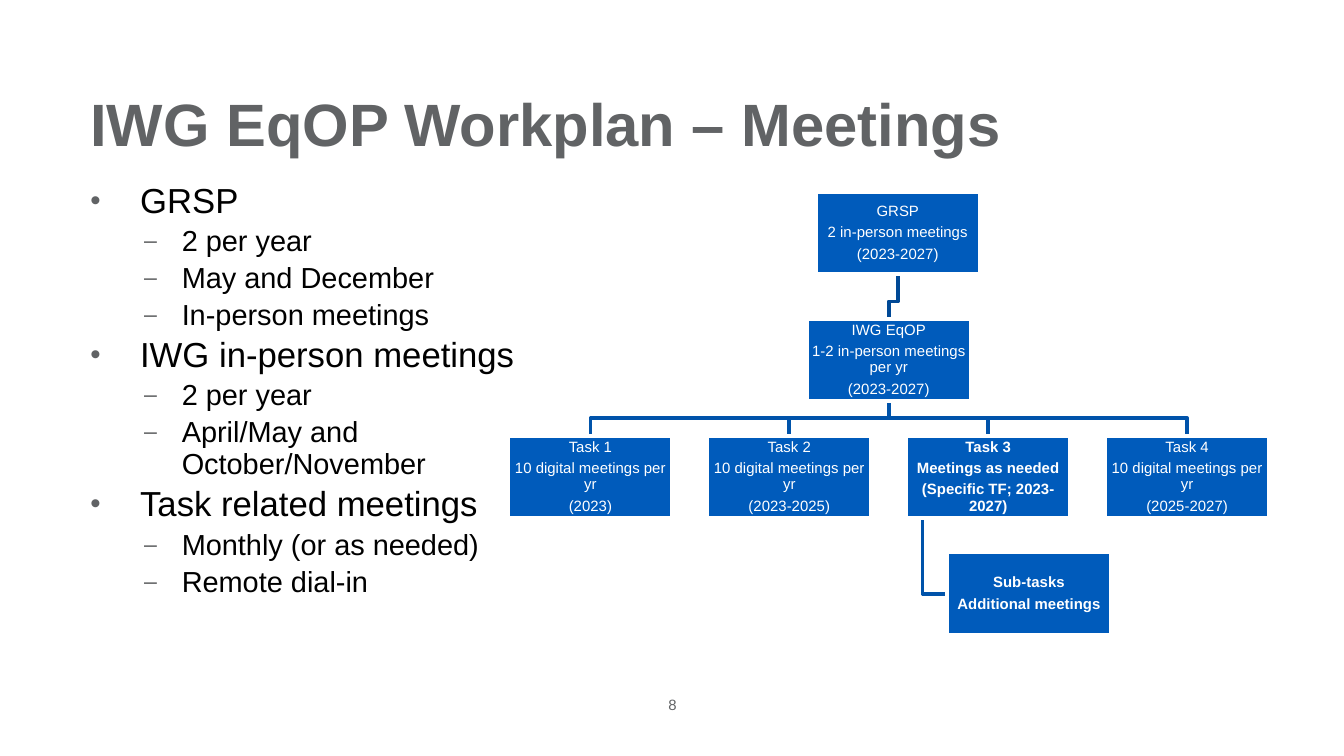
from lxml import etree
from pptx import Presentation
from pptx.dml.color import RGBColor
from pptx.enum.shapes import MSO_SHAPE
from pptx.enum.text import MSO_ANCHOR, PP_ALIGN
from pptx.oxml.ns import qn
from pptx.util import Inches, Pt

RECTANGLE = MSO_SHAPE.RECTANGLE
TOP, MIDDLE, BOTTOM = MSO_ANCHOR.TOP, MSO_ANCHOR.MIDDLE, MSO_ANCHOR.BOTTOM
LEFT, CENTER = PP_ALIGN.LEFT, PP_ALIGN.CENTER

COLORS = {
    "gray": "616365",
    "text": "000000",
    "box": "005BBB",
    "white": "FFFFFF",
    "top_link": "004996",
    "link": "0053AA",
}
LEVELS = [
    {"size": 18.6, "margin": 0.37, "hanging": 0.37, "mark": "•", "scale": 85},
    {"size": 15.5, "margin": 0.68, "hanging": 0.28, "mark": "–", "scale": 80},
]
BOX_WIDTH, BOX_HEIGHT = 12.2, 6.1
TASK_LEFT, TASK_STEP, TASK_TOP = 37.83, 14.8, 32.43


class MeetingSlide:
    """Draws the meeting plan on a grid of 100 columns with square cells."""

    def __init__(self, presentation, font="Arial"):
        self.slide = presentation.slides.add_slide(presentation.slide_layouts[6])
        self.cell = presentation.slide_width / 100
        self.font = font

    def units(self, *lengths):
        return [round(length * self.cell) for length in lengths]

    def color(self, name):
        return RGBColor.from_string(COLORS[name])

    def run(self, paragraph, text, size, color, bold=False):
        run = paragraph.add_run()
        run.text = text
        run.font.name = self.font
        run.font.size = Pt(size)
        run.font.bold = bold
        run.font.color.rgb = self.color(color)

    def frame(self, shape, anchor, insets):
        frame = shape.text_frame
        frame.word_wrap = True
        frame.vertical_anchor = anchor
        frame.margin_left, frame.margin_top, frame.margin_right, frame.margin_bottom = map(Inches, insets)
        return frame

    def paragraphs(self, frame, items):
        for index, item in enumerate(items):
            yield frame.add_paragraph() if index else frame.paragraphs[0], item

    def label(self, place, text, size, anchor, align, insets, bold=False):
        shape = self.slide.shapes.add_textbox(*self.units(*place))
        paragraph = self.frame(shape, anchor, insets).paragraphs[0]
        paragraph.alignment = align
        self.run(paragraph, text, size, "gray", bold)

    def bullet(self, paragraph, level):
        properties = paragraph._p.get_or_add_pPr()
        properties.set("marL", str(Inches(level["margin"])))
        properties.set("indent", str(-Inches(level["hanging"])))
        color = etree.SubElement(properties, qn("a:buClr"))
        etree.SubElement(color, qn("a:srgbClr"), val=COLORS["gray"])
        etree.SubElement(properties, qn("a:buSzPct"), val=str(level["scale"] * 1000))
        etree.SubElement(properties, qn("a:buFont"), typeface=self.font)
        etree.SubElement(properties, qn("a:buChar"), char=level["mark"])

    def outline(self, place, items):
        shape = self.slide.shapes.add_textbox(*self.units(*place))
        frame = self.frame(shape, TOP, (0.1, 0.05, 0.1, 0.05))
        for paragraph, (depth, text) in self.paragraphs(frame, items):
            level = LEVELS[depth]
            self.bullet(paragraph, level)
            paragraph.level = depth
            paragraph.line_spacing = 0.92
            paragraph.space_before = Pt(2.7)
            self.run(paragraph, text, level["size"], "text")
        frame.paragraphs[0].space_before = Pt(0)

    def box(self, left, top, lines, bold=False):
        place = self.units(left, top, BOX_WIDTH, BOX_HEIGHT)
        shape = self.slide.shapes.add_shape(RECTANGLE, *place)
        shape.shadow.inherit = False
        shape.fill.solid()
        shape.fill.fore_color.rgb = self.color("box")
        shape.line.color.rgb = self.color("white")
        shape.line.width = Pt(2)
        frame = self.frame(shape, MIDDLE, (0.01,) * 4)
        for paragraph, text in self.paragraphs(frame, lines):
            paragraph.alignment = CENTER
            paragraph.line_spacing = 0.9
            paragraph.space_after = Pt(2.8)
            self.run(paragraph, text, 8, "white", bold)

    def link(self, points, color):
        start, *others = [self.units(*point) for point in points]
        builder = self.slide.shapes.build_freeform(*start)
        builder.add_line_segments(others, close=False)
        shape = builder.convert_to_shape()
        shape.shadow.inherit = False
        shape.fill.background()
        shape.line.color.rgb = self.color(color)
        shape.line.width = Pt(2)

    def branch(self, parent, child, color):
        start = parent[0] + BOX_WIDTH / 2
        end = child[0] + BOX_WIDTH / 2
        bend = child[1] - 1.3
        self.link([(start, parent[1] + BOX_HEIGHT), (start, bend), (end, bend), (end, child[1])], color)


def main():
    presentation = Presentation()
    presentation.slide_width = Inches(10)
    presentation.slide_height = presentation.slide_width * 9 // 16
    page = MeetingSlide(presentation)

    page.label((42.9, 51.7, 14.3, 1.4), "8", 8, MIDDLE, CENTER, (0,) * 4)
    page.label((5.74, 6, 88.7, 6.1), "IWG EqOP Workplan – Meetings", 32, BOTTOM, LEFT,
               (0.1, 0.05, 0.1, 0.03), bold=True)
    page.outline((5.74, 13.1, 37.2, 33.8), [
        (0, "GRSP"),
        (1, "2 per year"),
        (1, "May and December"),
        (1, "In-person meetings"),
        (0, "IWG in-person meetings"),
        (1, "2 per year"),
        (1, "April/May and October/November"),
        (0, "Task related meetings"),
        (1, "Monthly (or as needed)"),
        (1, "Remote dial-in"),
    ])

    digital = "10 digital meetings per yr"
    tasks = [
        ("Task 1", digital, "(2023)"),
        ("Task 2", digital, "(2023-2025)"),
        ("Task 3", "Meetings as needed", "(Specific TF; 2023-2027)"),
        ("Task 4", digital, "(2025-2027)"),
    ]
    places = [(TASK_LEFT + TASK_STEP * index, TASK_TOP) for index in range(len(tasks))]
    grsp, group, subtasks = (60.7, 14.3), (60.03, 23.74), (70.46, 41.12)

    for place in places:
        page.branch(group, place, "link")
    stem, middle = places[2][0] + BOX_WIDTH / 10, subtasks[1] + BOX_HEIGHT / 2
    page.link([(stem, TASK_TOP + BOX_HEIGHT), (stem, middle), (subtasks[0], middle)], "link")
    page.branch(grsp, group, "top_link")

    page.box(*grsp, ["GRSP", "2 in-person meetings", "(2023-2027)"])
    page.box(*group, ["IWG EqOP", "1-2 in-person meetings per yr", "(2023-2027)"])
    for place, lines in zip(places, tasks):
        page.box(*place, lines, bold=lines[0] == "Task 3")
    page.box(*subtasks, ["Sub-tasks", "Additional meetings"], bold=True)

    presentation.save("out.pptx")


if __name__ == "__main__":
    main()
